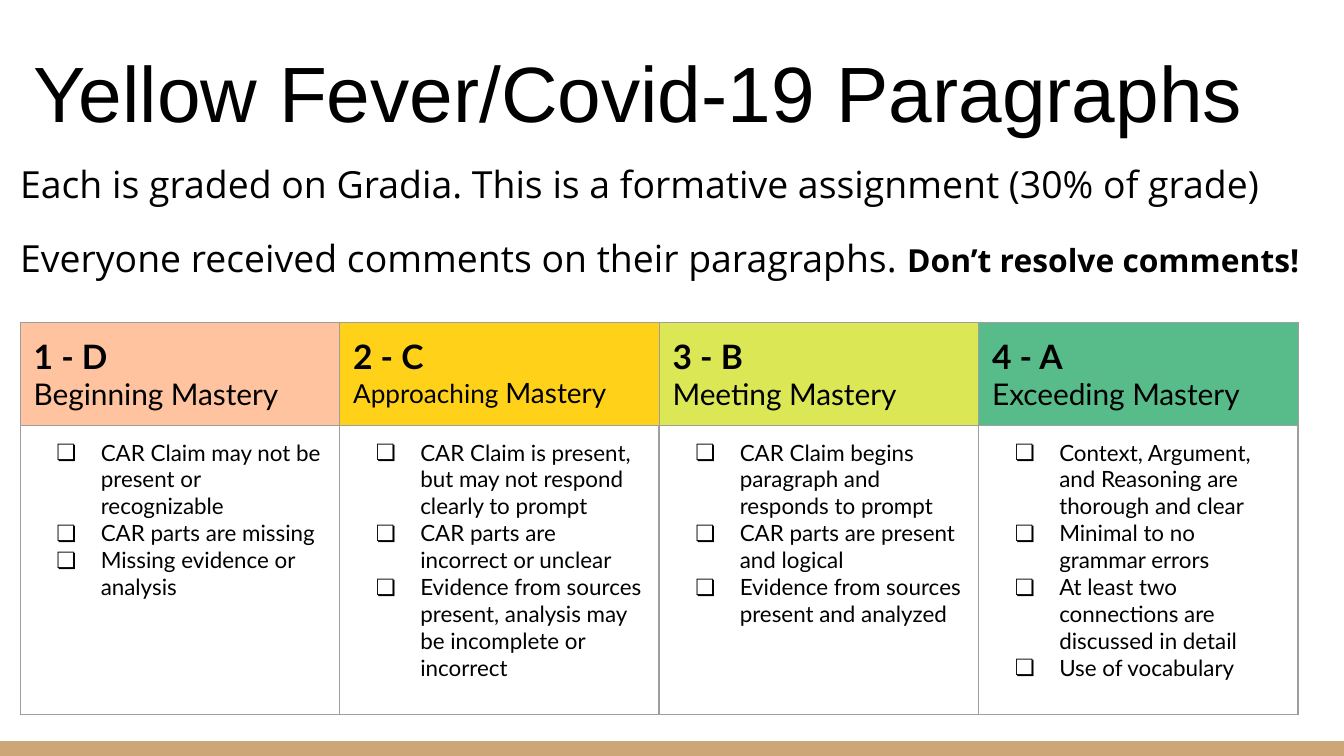
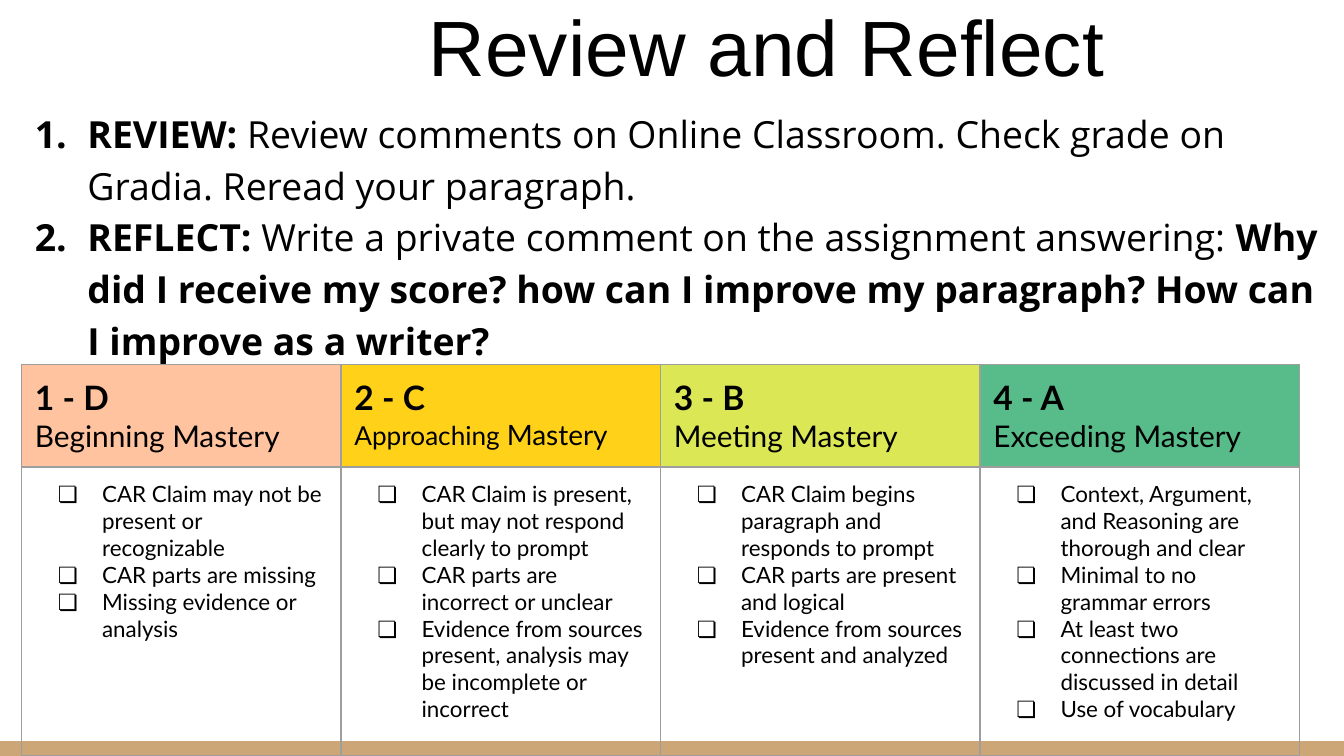
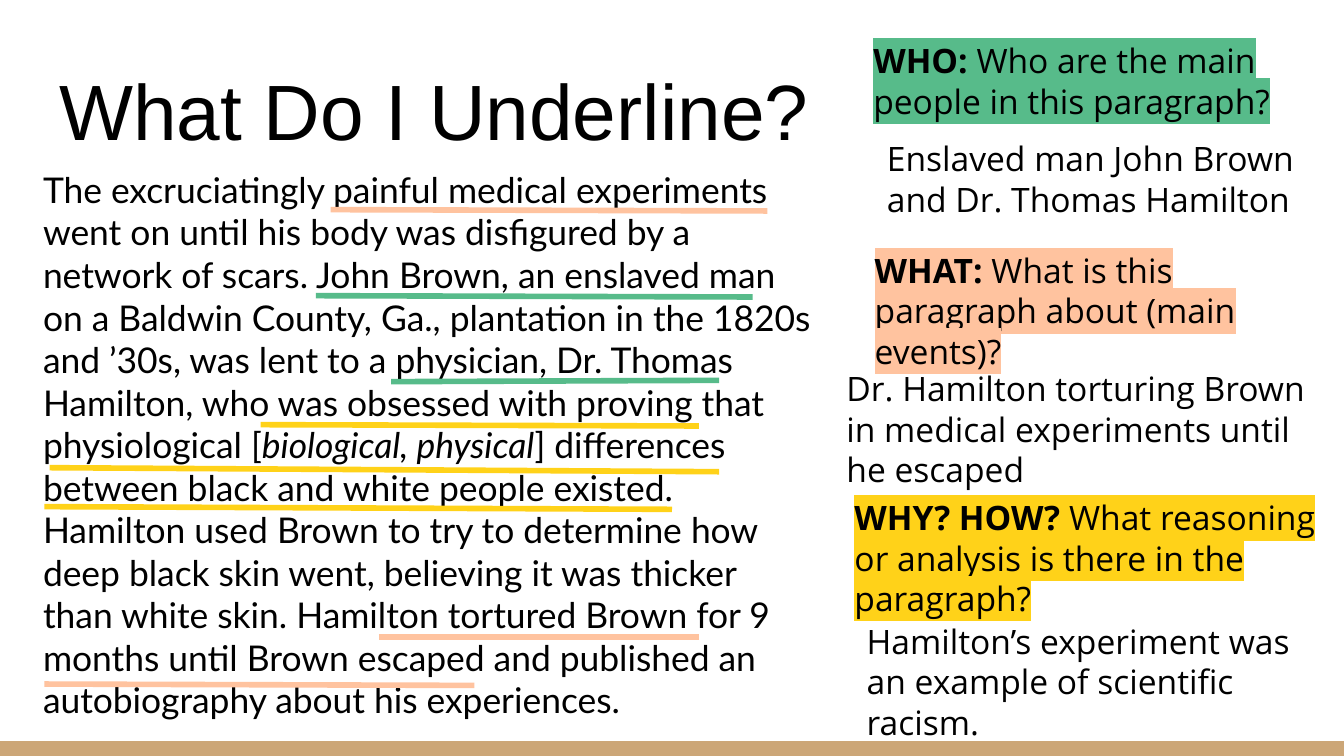
from lxml import etree
from pptx import Presentation
from pptx.dml.color import RGBColor
from pptx.enum.shapes import MSO_CONNECTOR, MSO_SHAPE
from pptx.enum.text import MSO_ANCHOR, MSO_AUTO_SIZE, PP_ALIGN
from pptx.oxml.ns import qn
from pptx.util import Inches, Pt

RECT = MSO_SHAPE.RECTANGLE
STRAIGHT = MSO_CONNECTOR.STRAIGHT
TOP, BOTTOM = MSO_ANCHOR.TOP, MSO_ANCHOR.BOTTOM
NO_FIT = MSO_AUTO_SIZE.NONE
LEFT = PP_ALIGN.LEFT

BLACK = RGBColor(0x00, 0x00, 0x00)
TAN = RGBColor(0xCC, 0xA6, 0x77)
PEACH = RGBColor(0xFF, 0xC3, 0x9F)
YELLOW = RGBColor(0xFF, 0xD2, 0x19)
LIME = RGBColor(0xDC, 0xE7, 0x55)
GREEN = RGBColor(0x57, 0xBB, 0x8A)
GRAY = RGBColor(0x9E, 0x9E, 0x9E)

TITLE_FONT, BODY_FONT, TABLE_FONT = "Arial", "Open Sans", "Lato"
SLIDE_W = Inches(10)
SLIDE_H = SLIDE_W * 9 // 16
INSET = Inches(0.1)
TITLE_W, TITLE_H = 9.32, 0.91
BODY_W, BODY_H = 9.88, 3.67
TABLE_W, HEAD_H, CRITERIA_H = 9.51, 0.72, 2.15
BOLD = {"bold": True}

RUBRIC = [
    ("1 - D", [("Beginning Mastery", {"size": 16})], PEACH,
     ["CAR Claim may not be present or recognizable",
      "CAR parts are missing",
      "Missing evidence or analysis"]),
    ("2 - C", [("Approaching ", {"size": 14}), ("Mastery", {"size": 15})], YELLOW,
     ["CAR Claim is present, but may not respond clearly to prompt",
      "CAR parts are incorrect or unclear",
      "Evidence from sources present, analysis may be incomplete or incorrect"]),
    ("3 - B", [("Meeting Mastery", {"size": 16})], LIME,
     ["CAR Claim begins paragraph and responds to prompt",
      "CAR parts are present and logical",
      "Evidence from sources present and analyzed"]),
    ("4 - A", [("Exceeding Mastery", {"size": 16})], GREEN,
     ["Context, Argument, and Reasoning are thorough and clear",
      "Minimal to no grammar errors",
      "At least two connections are discussed in detail",
      "Use of vocabulary"]),
]

PASSAGE = [
    ("The excruciatingly painful medical experiments went on until his body was "
     "disfigured by a network of scars. John Brown, an enslaved man on a Baldwin "
     "County, Ga., plantation in the 1820s and ’30s, was lent to a physician, "
     "Dr. Thomas Hamilton, who was obsessed with proving that physiological [", {}),
    ("biological, physical", {"italic": True}),
    ("] differences between black and white people existed. Hamilton used Brown to "
     "try to determine how deep black skin went, believing it was thicker than white "
     "skin. Hamilton tortured Brown for 9 months until Brown escaped and published "
     "an autobiography about his experiences.", {}),
]

UNDERLINES = [
    (2.13, 1.05, 5.38, 1.06, GREEN),
    (2.24, 0.41, 5.49, 0.42, PEACH),
    (1.72, 2.01, 4.98, 2.02, YELLOW),
    (2.69, 1.69, 5.13, 1.68, GREEN),
    (0.15, 2.33, 5.13, 2.36, YELLOW),
    (0.11, 2.62, 4.78, 2.64, YELLOW),
    (2.6, 3.59, 4.98, 3.59, PEACH),
    (0.11, 3.94, 3.31, 3.95, PEACH),
]

QUESTIONS = [
    (0.2, 0, 3.3, 0.66, GREEN,
     [("WHO:", BOLD), (" Who are the main people in this paragraph?", {})]),
    (0.21, 1.56, 3.28, 2.03, PEACH,
     [("WHAT: ", BOLD), ("What is this paragraph about (main events)?", {})]),
    (0.06, 3.4, 3.64, 3.28, YELLOW,
     [("WHY? HOW? ", BOLD),
      ("What reasoning or analysis is there in the paragraph?", {})]),
    (0.3, 0.73, 3.28, 0.73, None,
     [("Enslaved man John Brown and Dr. Thomas Hamilton", {})]),
    (0, 2.44, 3.64, 1.15, None,
     [("Dr. Hamilton torturing Brown in medical experiments until he escaped", {})]),
    (0.15, 4.32, 3.58, 1.15, None,
     [("Hamilton’s experiment was an example of scientific racism.", {})]),
]


def add_color(parent, tag, color):
    el = etree.SubElement(parent, qn(tag))
    etree.SubElement(el, qn("a:srgbClr"), val=str(color))
    return el


def set_bullet(p, bullet, indent, hanging, font):
    pPr = p._p.get_or_add_pPr()
    pPr.set("marL", str(Inches(indent)))
    pPr.set("indent", str(-Inches(hanging)))
    if bullet is None:
        etree.SubElement(pPr, qn("a:buNone"))
        return
    add_color(pPr, "a:buClr", BLACK)
    etree.SubElement(pPr, qn("a:buFont"), typeface=font)
    if bullet == "number":
        etree.SubElement(pPr, qn("a:buAutoNum"), type="arabicPeriod")
    else:
        etree.SubElement(pPr, qn("a:buChar"), char=bullet)


def add_run(p, text, font, size, bold=False, italic=False, highlight=None):
    r = p.add_run()
    r.text = text
    r.font.size, r.font.bold, r.font.italic = Pt(size), bold, italic
    r.font.color.rgb = BLACK
    if highlight is not None:
        add_color(r._r.get_or_add_rPr(), "a:highlight", highlight)
    r.font.name = font


def write(tf, paragraphs, font, bullet=None, indent=0, hanging=0, spacing=1.0, gap=0,
          **fmt):
    for i, runs in enumerate(paragraphs):
        p = tf.add_paragraph() if i else tf.paragraphs[0]
        set_bullet(p, bullet, indent, hanging, font)
        p.alignment = LEFT
        p.line_spacing = spacing
        p.space_before = Pt(gap if i else 0)
        for text, changes in runs:
            add_run(p, text, font, **{**fmt, **changes})


def prepare_frame(shape, anchor=TOP):
    tf = shape.text_frame
    tf.word_wrap = True
    tf.auto_size = NO_FIT
    tf.vertical_anchor = anchor
    tf.margin_left = tf.margin_right = tf.margin_top = tf.margin_bottom = INSET
    return tf


def place(shape, x, y, w, h):
    shape.left, shape.top = Inches(x), Inches(y)
    shape.width, shape.height = Inches(w), Inches(h)


def add_title(s, text, x, y):
    place(s.shapes.title, x, y, TITLE_W, TITLE_H)
    tf = prepare_frame(s.shapes.title, BOTTOM)
    write(tf, [[(text, {})]], font=TITLE_FONT, size=42)


def add_body(s, paragraphs, x, y, w=BODY_W, **fmt):
    body = s.placeholders[1]
    place(body, x, y, w, BODY_H)
    write(prepare_frame(body), paragraphs, **fmt)


def set_borders(cell, row, col):
    tcPr = cell._tc.get_or_add_tcPr()
    for side in "LRTB":
        thick = ((col >= 2 and (row == 1 or side == "B"))
                 or (row == 1 and col == 1 and side == "R"))
        ln = etree.SubElement(tcPr, qn("a:ln" + side), w=str(Pt(1 if thick else 0.75)))
        add_color(ln, "a:solidFill", GRAY)


def add_rubric(s, x, y):
    n = len(RUBRIC)
    table = s.shapes.add_table(2, n, Inches(x), Inches(y), Inches(TABLE_W),
                               Inches(HEAD_H + CRITERIA_H)).table
    table.first_row = table.horz_banding = False
    table.rows[0].height, table.rows[1].height = Inches(HEAD_H), Inches(CRITERIA_H)
    for col, (grade, level, color, criteria) in enumerate(RUBRIC):
        table.columns[col].width = Inches(TABLE_W) // n
        head, detail = table.cell(0, col), table.cell(1, col)
        for row, cell in enumerate((head, detail)):
            cell.margin_left = cell.margin_right = INSET
            cell.margin_top = cell.margin_bottom = INSET
            set_borders(cell, row, col)
        head.fill.solid()
        head.fill.fore_color.rgb = color
        detail.fill.background()
        write(head.text_frame, [[(grade, BOLD)], level], font=TABLE_FONT, size=18)
        write(detail.text_frame, [[(c, {})] for c in criteria], bullet="❏",
              indent=0.5, hanging=0.33, font=TABLE_FONT, size=12)


def add_underlines(s, x, y):
    for x1, y1, x2, y2, color in UNDERLINES:
        line = s.shapes.add_connector(STRAIGHT, Inches(x + x1), Inches(y + y1),
                                      Inches(x + x2), Inches(y + y2))
        line.line.color.rgb = color
        line.line.width = Pt(3)
        etree.SubElement(line.element.spPr, qn("a:effectLst"))


def add_questions(s, x, y):
    for dx, dy, w, h, color, runs in QUESTIONS:
        box = s.shapes.add_textbox(Inches(x + dx), Inches(y + dy), Inches(w), Inches(h))
        write(prepare_frame(box), [runs], font=BODY_FONT, size=18, highlight=color)


def add_layout_band(s):
    height = Inches(0.11)
    band = s.shapes.add_shape(RECT, 0, SLIDE_H - height, SLIDE_W, height)
    band.shadow.inherit = False
    band.fill.solid()
    band.fill.fore_color.rgb = TAN
    band.line.fill.background()
    s.slide_layout.shapes.element.append(band.element)


def build_grades(s):
    add_title(s, "Yellow Fever/Covid-19 Paragraphs", 0.15, 0.22)
    add_body(s, [
        [("Each is graded on Gradia. This is a formative assignment (30% of grade)", {})],
        [("Everyone received comments on their paragraphs. ", {}),
         ("Don’t resolve comments!", {"size": 17, "bold": True})],
    ], 0.05, 1.05, spacing=1.15, gap=12, font=BODY_FONT, size=20)
    add_rubric(s, 0.15, 2.4)


def build_review(s):
    add_title(s, "Review and Reflect", 3.09, -0.12)
    add_body(s, [
        [("REVIEW:", BOLD),
         (" Review comments on Online Classroom. Check grade on Gradia. "
          "Reread your paragraph.", {})],
        [("REFLECT:", BOLD),
         (" Write a private comment on the assignment answering: ", {}),
         ("Why did I receive my score? how can I improve my paragraph? "
          "How can I improve as a writer?", BOLD)],
    ], 0.05, 0.68, bullet="number", indent=0.5, hanging=0.39, spacing=1.15,
        font=BODY_FONT, size=20)
    add_rubric(s, 0.16, 2.71)


def build_underline(s):
    add_title(s, "What Do I Underline?", 0.34, 0.35)
    add_body(s, [PASSAGE], 0.22, 1.15, w=5.92, font=TABLE_FONT, size=19)
    add_underlines(s, 0.22, 1.15)
    add_questions(s, 6.2, 0.2)


def main():
    prs = Presentation()
    prs.slide_width, prs.slide_height = SLIDE_W, SLIDE_H
    layout = prs.slide_layouts[1]
    slides = [prs.slides.add_slide(layout) for _ in range(3)]
    add_layout_band(slides[0])
    for build, s in zip((build_grades, build_review, build_underline), slides):
        build(s)
    prs.save("out.pptx")


if __name__ == "__main__":
    main()
